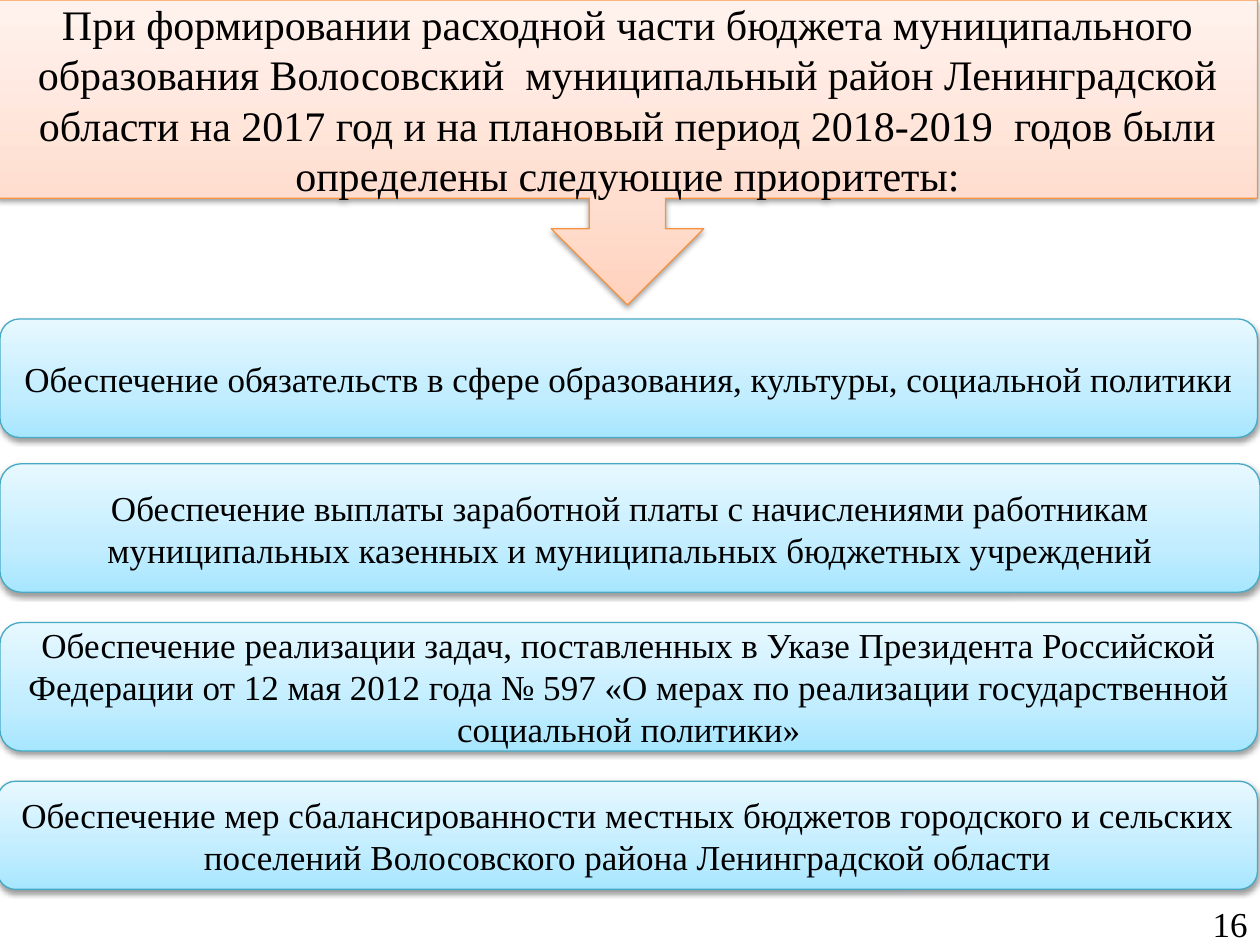
from typing import NamedTuple

from lxml.etree import SubElement
from pptx import Presentation
from pptx.dml.color import RGBColor
from pptx.enum.shapes import MSO_SHAPE
from pptx.enum.text import MSO_ANCHOR, PP_ALIGN
from pptx.oxml.ns import qn
from pptx.util import Cm, Pt

FONT = "Times New Roman"
BLACK = RGBColor(0x00, 0x00, 0x00)
ORANGE_LINE = RGBColor(0xF6, 0x92, 0x40)
ORANGE_DEEP = RGBColor(0xFF, 0xD2, 0xBD)
ORANGE_MID = RGBColor(0xFF, 0xDE, 0xD0)
ORANGE_PALE = RGBColor(0xFF, 0xF2, 0xED)
BLUE_LINE = RGBColor(0x46, 0xAA, 0xC5)
BLUE_DEEP = RGBColor(0xA7, 0xE6, 0xFF)
BLUE_MID = RGBColor(0xC1, 0xED, 0xFF)
BLUE_PALE = RGBColor(0xE7, 0xF8, 0xFF)


class Palette(NamedTuple):
    line: RGBColor
    stops: tuple[tuple[int, RGBColor], ...]


class Panel(NamedTuple):
    """A shaded panel; lengths are in centimetres."""
    text: str
    left: float
    top: float
    width: float
    height: float
    preset: MSO_SHAPE = MSO_SHAPE.ROUNDED_RECTANGLE
    palette: Palette = Palette(
        BLUE_LINE, ((0, BLUE_DEEP), (35, BLUE_MID), (100, BLUE_PALE)))
    size: int = 20


ORANGE = Palette(ORANGE_LINE,
                 ((0, ORANGE_DEEP), (35, ORANGE_MID), (100, ORANGE_PALE)))

HEADING = Panel(
    "При формировании расходной части бюджета муниципального образования "
    "Волосовский  муниципальный район Ленинградской области на 2017 год и на "
    "плановый период 2018-2019  годов были определены следующие приоритеты:",
    -0.05, 0, 25.4, 6.15, MSO_SHAPE.DOWN_ARROW_CALLOUT, ORANGE, 24)

PRIORITIES = (
    Panel("Обеспечение обязательств в сфере образования, культуры, "
          "социальной политики", 0, 6.43, 25.35, 2.39),
    Panel("Обеспечение выплаты заработной платы с начислениями работникам "
          "муниципальных казенных и муниципальных бюджетных учреждений",
          0, 9.35, 25.4, 2.59),
    Panel("Обеспечение реализации задач, поставленных в Указе Президента "
          "Российской Федерации от 12 мая 2012 года № 597 «О мерах по "
          "реализации государственной социальной политики»",
          0, 12.55, 25.35, 2.59),
    Panel("Обеспечение мер сбалансированности местных бюджетов городского и "
          "сельских поселений Волосовского района Ленинградской области",
          -0.05, 15.75, 25.4, 2.18),
)


def set_text(shape, text: str, size: int, align: PP_ALIGN) -> None:
    frame = shape.text_frame
    frame.text = text
    frame.word_wrap = True
    frame.vertical_anchor = MSO_ANCHOR.MIDDLE
    paragraph = frame.paragraphs[0]
    paragraph.alignment = align
    font = paragraph.runs[0].font
    font.name, font.size = FONT, Pt(size)
    font.color.rgb = BLACK


def set_gradient(shape, stops: tuple[tuple[int, RGBColor], ...]) -> None:
    shape.fill.gradient()
    shape.fill.gradient_angle = 90
    stop_list = shape.element.spPr.find(".//" + qn("a:gsLst"))
    for old_stop in list(stop_list):
        stop_list.remove(old_stop)
    for position, color in stops:
        stop = SubElement(stop_list, qn("a:gs"), pos=str(position * 1000))
        SubElement(stop, qn("a:srgbClr"), val=str(color))


def set_shadow(shape) -> None:
    shape.shadow.inherit = False
    effects = shape.element.spPr.find(qn("a:effectLst"))
    shadow = SubElement(effects, qn("a:outerShdw"), blurRad="40000",
                        dist="20000", dir="5400000", rotWithShape="0")
    color = SubElement(shadow, qn("a:srgbClr"), val=str(BLACK))
    SubElement(color, qn("a:alpha"), val="38000")


def draw_panel(slide, panel: Panel) -> None:
    shape = slide.shapes.add_shape(panel.preset, Cm(panel.left), Cm(panel.top),
                                   Cm(panel.width), Cm(panel.height))
    set_gradient(shape, panel.palette.stops)
    shape.line.color.rgb = panel.palette.line
    shape.line.width = Pt(0.75)
    set_shadow(shape)
    set_text(shape, panel.text, panel.size, PP_ALIGN.CENTER)


def main() -> None:
    presentation = Presentation()
    presentation.slide_width, presentation.slide_height = Cm(25.4), Cm(19.05)
    slide = presentation.slides.add_slide(presentation.slide_layouts[6])

    # Heading with its arrow, then the priorities
    for panel in (HEADING, *PRIORITIES):
        draw_panel(slide, panel)

    # Page number
    page_number = slide.shapes.add_textbox(Cm(19.48), Cm(18.11), Cm(5.92), Cm(1.02))
    set_text(page_number, "16", 20, PP_ALIGN.RIGHT)

    presentation.save("out.pptx")


if __name__ == "__main__":
    main()
